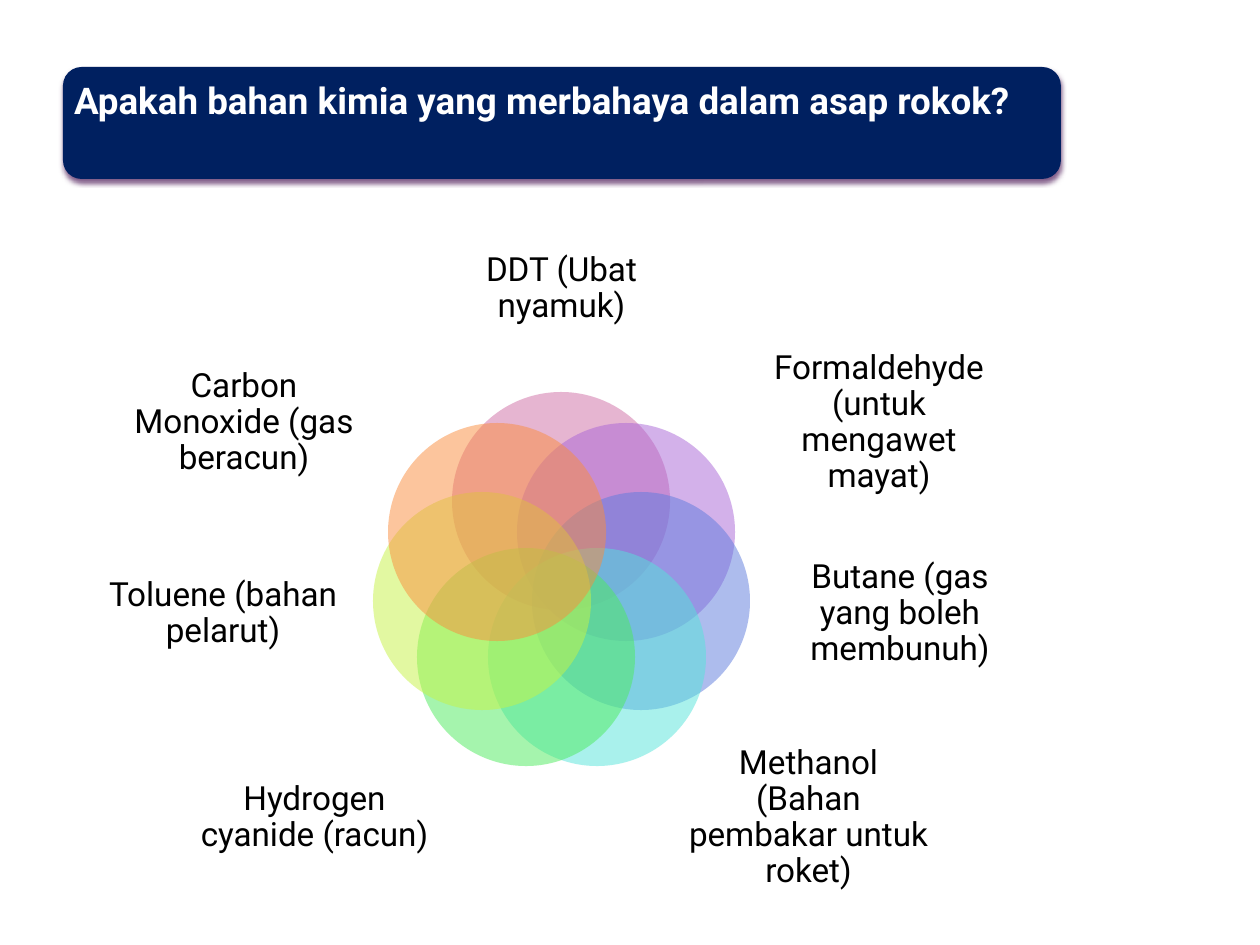
"""Build a slide with a ring of seven circles naming harmful chemicals in cigarette smoke."""
import math
from dataclasses import dataclass

import pptx
import pptx.dml.color
import pptx.enum.shapes
import pptx.enum.text
import pptx.oxml
import pptx.oxml.ns
import pptx.util

ALIGN = pptx.enum.text.PP_ALIGN
ANCHOR = pptx.enum.text.MSO_ANCHOR
SHAPE = pptx.enum.shapes.MSO_SHAPE
SCALE = 914400 / 126


@dataclass(frozen=True)
class Theme:
    font: str = "Roboto"
    head: int = 21
    body: int = 19
    light: str = "FFFFFF"
    dark: str = "000000"
    band: str = "002060"
    shade: str = "6A3F73"
    clear: int = 50


THEME = Theme()

BAND = (63, 67, 998, 112)
TITLE = "Apakah bahan kimia yang merbahaya dalam asap rokok?"
HUB_X, HUB_Y = 561.5, 583
RING, SIZE = 82, 218

TOP = (437, 222, 249, 134)
HIGH = (761, 349, 236, 147)
MID = (784, 535, 232, 158)
LOW = (684, 746, 249, 144)


def flip(box):
    left, top, width, height = box
    return round(2 * HUB_X) - left - width, top, width, height


PETALS = [
    ("DDT (Ubat nyamuk)", "CF6DA4", TOP),
    ("Formaldehyde (untuk mengawet mayat)", "A965D6", HIGH),
    ("Butane (gas yang boleh membunuh)", "5D7BDD", MID),
    ("Methanol (Bahan pembakar untuk roket)", "55E4DA", LOW),
    ("Hydrogen cyanide (racun)", "4DEB5C", flip(LOW)),
    ("Toluene (bahan pelarut)", "C6F345", flip(MID)),
    ("Carbon Monoxide (gas beracun)", "FA8D3D", flip(HIGH)),
]


def px(num):
    return pptx.util.Emu(round(num * SCALE))


def place(box):
    return [px(num) for num in box]


def tint(code):
    return pptx.dml.color.RGBColor.from_string(code)


def write(shape, text, *, size, color, bold=False, align=ALIGN.CENTER,
          anchor=ANCHOR.MIDDLE, inset=(0, 0, 0, 0)):
    frame = shape.text_frame
    frame.text = text
    frame.word_wrap = True
    frame.auto_size = pptx.enum.text.MSO_AUTO_SIZE.NONE
    frame.vertical_anchor = anchor
    (frame.margin_left, frame.margin_top,
     frame.margin_right, frame.margin_bottom) = place(inset)
    para = frame.paragraphs[0]
    para.alignment = align
    para.line_spacing = 0.9
    para.space_before = pptx.util.Pt(0)
    font = para.runs[0].font
    font.name = THEME.font
    font.size = pptx.util.Pt(size)
    font.bold = bold
    font.color.rgb = tint(color)


def draw(slide, kind, box, color):
    shape = slide.shapes.add_shape(kind, *place(box))
    shape.shadow.inherit = False
    shape.fill.solid()
    shape.fill.fore_color.rgb = tint(color)
    shape.line.fill.background()
    return shape


def fade(shape, part):
    color = shape._element.spPr.find(".//" + pptx.oxml.ns.qn("a:srgbClr"))
    alpha = pptx.oxml.parse_xml(
        f'<a:alpha {pptx.oxml.ns.nsdecls("a")} val="{part * 1000}"/>')
    color.append(alpha)


def shade(shape):
    cast = pptx.oxml.parse_xml(
        f'<a:outerShdw {pptx.oxml.ns.nsdecls("a")} blurRad="39370" dist="25400" '
        f'dir="5400000" rotWithShape="0"><a:srgbClr val="{THEME.shade}">'
        '<a:alpha val="83000"/></a:srgbClr></a:outerShdw>')
    shape._element.spPr.find(pptx.oxml.ns.qn("a:effectLst")).append(cast)


def add_head(slide):
    band = draw(slide, SHAPE.ROUNDED_RECTANGLE, BAND, THEME.band)
    shade(band)
    title = slide.shapes.title
    title.left, title.top, title.width, title.height = place(BAND)
    write(title, TITLE, size=THEME.head, color=THEME.light, bold=True,
          align=ALIGN.LEFT, anchor=ANCHOR.TOP, inset=(11, 16, 11, 11))
    title._element.addprevious(band._element)


def add_petal(slide, turn, text, color, box):
    left = HUB_X + RING * math.sin(turn) - SIZE / 2
    top = HUB_Y - RING * math.cos(turn) - SIZE / 2
    disc = draw(slide, SHAPE.OVAL, (round(left), round(top), SIZE, SIZE), color)
    fade(disc, THEME.clear)
    label = slide.shapes.add_textbox(*place(box))
    write(label, text, size=THEME.body, color=THEME.dark)


def main():
    deck = pptx.Presentation()
    deck.slide_width, deck.slide_height = px(1260), px(945)
    slide = deck.slides.add_slide(deck.slide_layouts[5])
    add_head(slide)
    for rank, petal in enumerate(PETALS):
        add_petal(slide, rank * math.tau / len(PETALS), *petal)
    deck.save("out.pptx")


if __name__ == "__main__":
    main()
